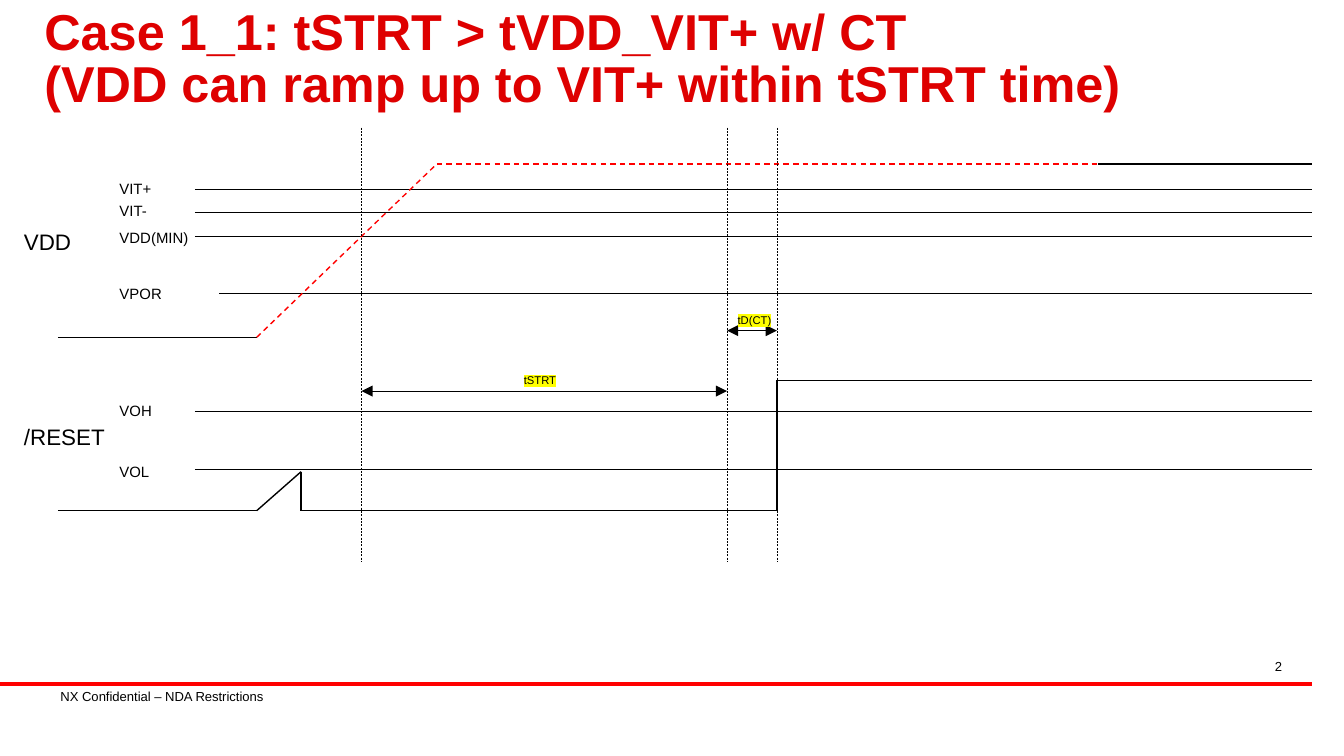
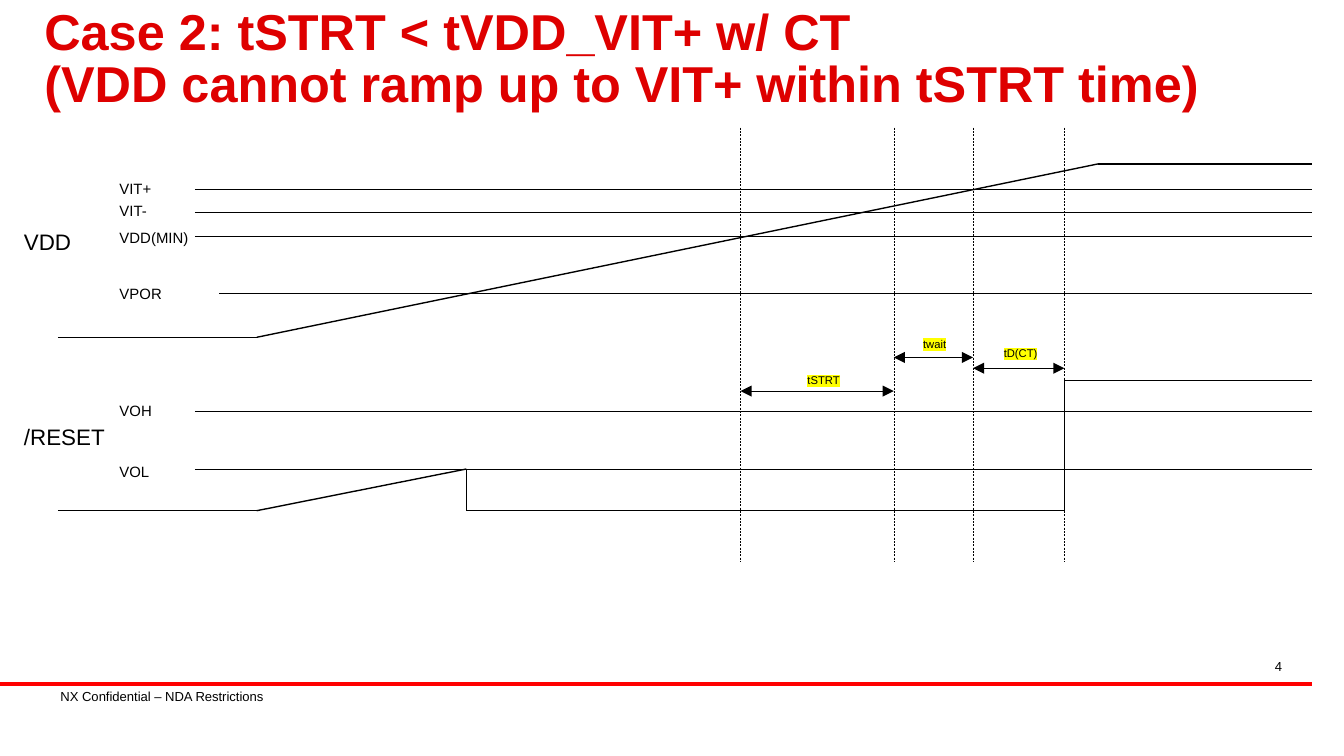
from itertools import pairwise

from lxml.etree import SubElement
from pptx import Presentation
from pptx.dml.color import RGBColor
from pptx.enum.dml import MSO_LINE
from pptx.enum.shapes import MSO_CONNECTOR
from pptx.enum.text import MSO_ANCHOR, MSO_AUTO_SIZE as FIT, PP_ALIGN
from pptx.oxml import parse_xml
from pptx.oxml.ns import nsdecls, qn
from pptx.util import Inches, Pt

COLORS = {"title": "DE0000", "accent": "FF0000", "ink": "000000", "mark": "FFFF00"}
FONT = "Arial"
SLIDE_W, SLIDE_H = Inches(10), Inches(5.625)
CELL = SLIDE_W / 100
TITLE_BOX = (2.5, 1.2, 92.5, 6.7)
TIGHT = {"margin_left": 0.8, "margin_right": 0.8, "margin_top": 0.4, "margin_bottom": 0.4}
RIGHT = 97.6
THIN, WAVE, BAND = 0.25, 0.75, 2.25
LABEL_X, LABEL_H = 7.9, 2.4
LEVELS = [
    ("VIT+", 12.9, 4.4, 14.5, 14.1),
    ("VIT-", 14.5, 4.1, 14.5, 15.8),
    ("VDD(MIN)", 16.5, 7.2, 14.5, 17.6),
    ("VPOR", 20.7, 5.2, 16.3, 21.8),
    ("VOH", 29.4, 4.5, 14.5, 30.6),
    ("VOL", 33.9, 4.3, 14.5, 34.9),
]
SIGNALS = [("VDD", 16.5, 5.6), ("/RESET", 31, 8.1)]
VDD_LOW, VDD_HIGH = 25.1, 12.2
RESET_LOW, RESET_HIGH = 38, 28.3
START, RAMP, SETTLED = 4.3, 19.1, 81.7
MARKER_TOP, MARKER_END = 9.5, 41.8

CASES = [
    {
        "title": "Case 1_1: tSTRT > tVDD_VIT+ w/ CT\v(VDD can ramp up to VIT+ within tSTRT time)",
        "number": "2",
        "vdd": [
            ([(START, VDD_LOW), (RAMP, VDD_LOW)], "ink", False),
            ([(RAMP, VDD_LOW), (32.5, VDD_HIGH), (SETTLED, VDD_HIGH)], "accent", True),
            ([(SETTLED, VDD_HIGH), (RIGHT, VDD_HIGH)], "ink", False),
        ],
        "blip": (22.4, 35.1),
        "release": 57.8,
        "markers": [26.9, 54.1, 57.8],
        "spans": [
            ("tSTRT", 26.9, 54.1, 29.1, (38, 27.3, 4.4, 2)),
            ("tD(CT)", 54.1, 57.8, 24.6, (53.9, 22.8, 4.5, 2)),
        ],
    },
    {
        "title": "Case 2: tSTRT < tVDD_VIT+ w/ CT\v(VDD cannot ramp up to VIT+ within tSTRT time)",
        "number": "4",
        "vdd": [
            ([(START, VDD_LOW), (RAMP, VDD_LOW), (SETTLED, VDD_HIGH), (RIGHT, VDD_HIGH)], "ink", False),
        ],
        "blip": (34.7, 34.9),
        "release": 79.2,
        "markers": [55.1, 66.5, 72.4, 79.2],
        "spans": [
            ("tSTRT", 55.1, 66.5, 29.1, (59.1, 27.3, 4.4, 2)),
            ("twait", 66.5, 72.4, 26.6, (67.7, 24.6, 3.8, 2)),
            ("tD(CT)", 72.4, 79.2, 27.4, (73.7, 25.3, 4.5, 2)),
        ],
    },
]


def cells(*counts):
    return [round(n * CELL) for n in counts]


def rgb(name):
    return RGBColor.from_string(COLORS[name])


def apply(target, values):
    for name, value in values.items():
        setattr(target, name, value)


def set_margins(tf):
    apply(tf, {name: cells(n)[0] for name, n in TIGHT.items()})


def set_font(font, size, color="ink", bold=False):
    apply(font, {"name": FONT, "size": Pt(size), "bold": bold})
    font.color.rgb = rgb(color)


def add_line(slide, start, end, width=THIN, color="ink", dashed=False, arrows=False):
    c = slide.shapes.add_connector(MSO_CONNECTOR.STRAIGHT, *cells(*start, *end))
    c.line.width = Pt(width)
    c.line.color.rgb = rgb(color)
    if dashed:
        c.line.dash_style = MSO_LINE.DASH
    if arrows:
        for tag in ("a:headEnd", "a:tailEnd"):
            SubElement(c.line._get_or_add_ln(), qn(tag), type="triangle")
    SubElement(c._element.spPr, qn("a:effectLst"))


def add_path(slide, points, color="ink", dashed=False):
    for start, end in pairwise(points):
        add_line(slide, start, end, WAVE, color, dashed)


def add_label(slide, text, box, size, wrap=False, fit=FIT.SHAPE_TO_FIT_TEXT,
              align=PP_ALIGN.LEFT, tight=False, marked=False):
    tf = slide.shapes.add_textbox(*cells(*box)).text_frame
    apply(tf, {"word_wrap": wrap, "auto_size": fit})
    if tight:
        set_margins(tf)
    p = tf.paragraphs[0]
    p.alignment = align
    r = p.add_run()
    r.text = text
    set_font(r.font, size)
    if marked:
        fill = r._r.rPr.find(qn("a:solidFill"))
        fill.addnext(parse_xml(
            f'<a:highlight {nsdecls("a")}><a:srgbClr val="{COLORS["mark"]}"/></a:highlight>'))


def add_frame(slide, title, number):
    sp = slide.shapes.title
    apply(sp, dict(zip(("left", "top", "width", "height"), cells(*TITLE_BOX))))
    tf = sp.text_frame
    tf.text = title
    apply(tf, {"word_wrap": True, "auto_size": FIT.NONE, "vertical_anchor": MSO_ANCHOR.MIDDLE})
    set_margins(tf)
    p = tf.paragraphs[0]
    apply(p, {"alignment": PP_ALIGN.LEFT, "line_spacing": 0.85})
    for r in p.runs:
        set_font(r.font, 27, "title", True)
    add_line(slide, (0, 50.9), (RIGHT, 50.9), BAND, "accent")
    add_label(slide, "NX Confidential – NDA Restrictions", (3.7, 50.8, 23.1, 2), 7,
              wrap=True, tight=True)
    add_label(slide, number, (72.9, 48.6, 23.3, 1.7), 7, wrap=True, fit=FIT.NONE,
              align=PP_ALIGN.RIGHT, tight=True)


def add_levels(slide):
    for name, top, width, left, y in LEVELS:
        add_line(slide, (left, y), (RIGHT, y))
        add_label(slide, name, (LABEL_X, top, width, LABEL_H), 8)
    for name, top, width in SIGNALS:
        add_label(slide, name, (0.8, top, width, 3), 12)


def add_reset(slide, blip, release):
    add_path(slide, [
        (START, RESET_LOW), (RAMP, RESET_LOW), blip, (blip[0], RESET_LOW),
        (release, RESET_LOW), (release, RESET_HIGH), (RIGHT, RESET_HIGH),
    ])


def add_timing(slide, markers, spans):
    for x in markers:
        add_line(slide, (x, MARKER_TOP), (x, MARKER_END), dashed=True)
    for name, left, right, y, box in spans:
        add_line(slide, (left, y), (right, y), arrows=True)
        add_label(slide, name, box, 6, marked=True)


def main():
    prs = Presentation()
    apply(prs, {"slide_width": SLIDE_W, "slide_height": SLIDE_H})
    for case in CASES:
        slide = prs.slides.add_slide(prs.slide_layouts[5])
        add_frame(slide, case["title"], case["number"])
        add_levels(slide)
        for points, color, dashed in case["vdd"]:
            add_path(slide, points, color, dashed)
        add_reset(slide, case["blip"], case["release"])
        add_timing(slide, case["markers"], case["spans"])
    prs.save("out.pptx")


if __name__ == "__main__":
    main()
